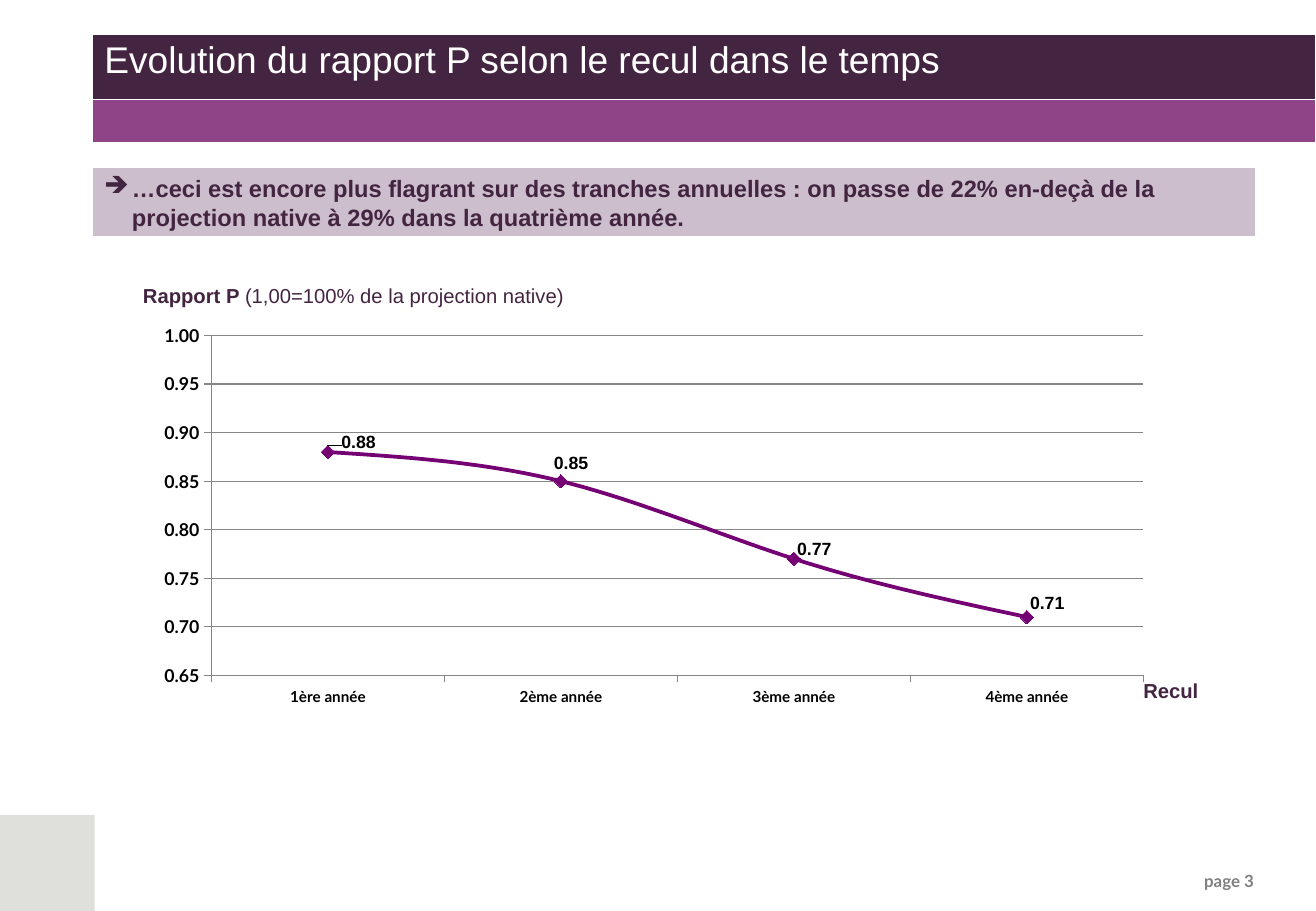
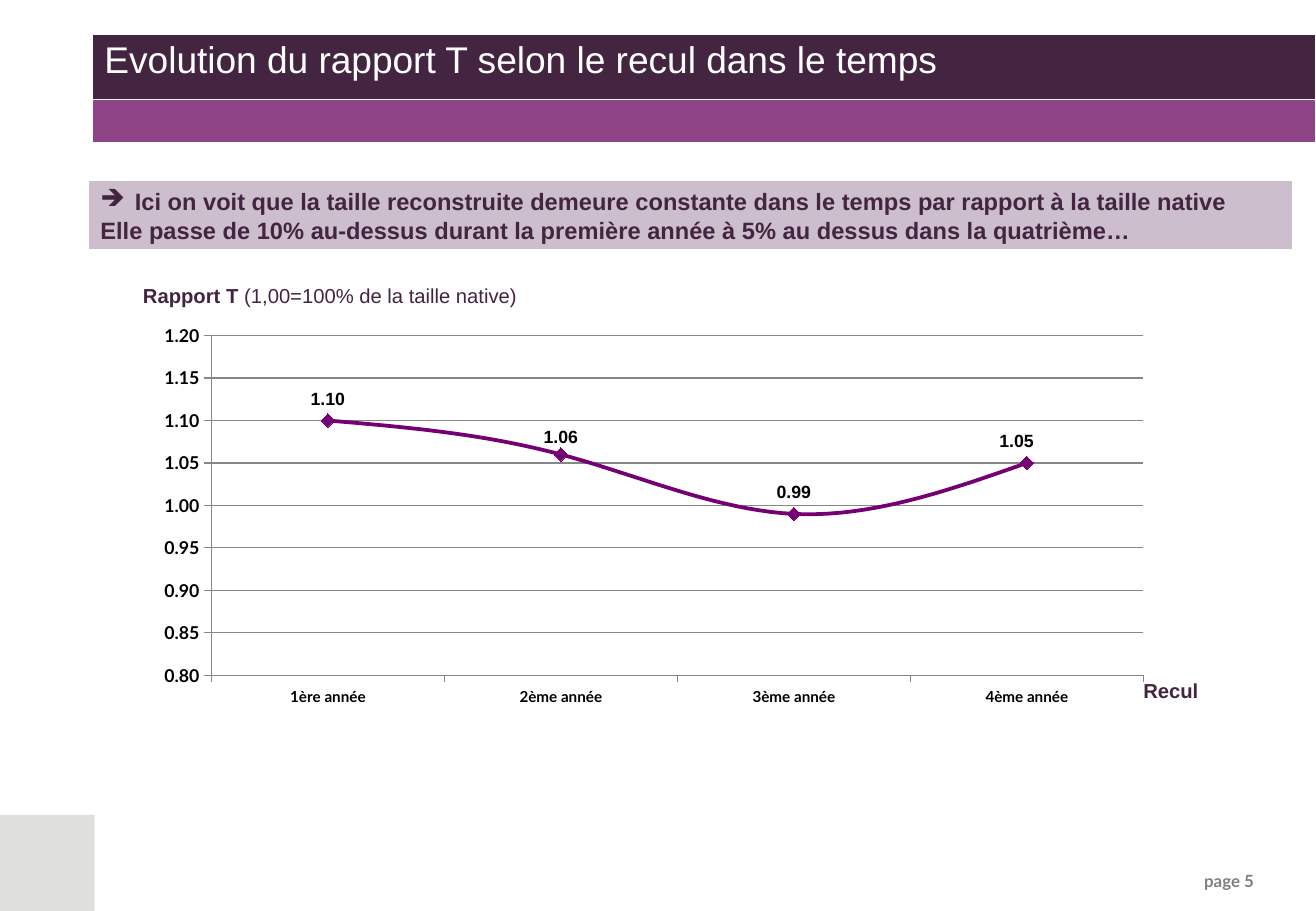
import pptx
import pptx.chart.data
import pptx.dml.color
import pptx.enum.chart
import pptx.enum.shapes
import pptx.enum.text
import pptx.oxml
import pptx.oxml.ns
import pptx.util
from lxml import etree

Cm, Pt = pptx.util.Cm, pptx.util.Pt
qn = pptx.oxml.ns.qn


class Theme:
    dark, purple, pale = "432541", "8E4487", "CCBECC"
    corner, footer, curve = "DFE0DB", "808080", "740074"
    white, black, grid = "FFFFFF", "000000", "868686"
    body, figures = "Arial", "Lato"
    title, callout, caption, page = 22, 14, 12, 10
    values, categories = 10.5, 9
    hairline, curve_width, marker = 0.75, 2.25, 8


# Content; each callout line is (text, hanging indent in cm or 0 for no arrow)
YEARS = ["1ère année", "2ème année", "3ème année", "4ème année"]
SLIDES = [
    dict(
        page=3, ratio="P", unit="projection native",
        callout=[("…ceci est encore plus flagrant sur des tranches annuelles : "
                  "on passe de 22% en-deçà de la projection native à 29% "
                  "dans la quatrième année.", 0.58)],
        callout_box=(1.93, 3.51, 24.33, 1.45),
        values=[0.88, 0.85, 0.77, 0.71], scale=(0.65, 1),
        # label shifts from "above", as shares of the chart's width and height
        shifts=[(0.03, 0.03), (0.01, 0.01), (0.02, 0.03), (0.02, 0.02)],
    ),
    dict(
        page=5, ratio="T", unit="taille native",
        callout=[("Ici on voit que la taille reconstruite demeure constante "
                  "dans le temps par rapport à la taille native", 0.72),
                 ("Elle passe de 10% au-dessus durant la première année "
                  "à 5% au dessus dans la quatrième…", 0)],
        callout_box=(1.85, 3.78, 25.17, 1.45),
        values=[1.1, 1.06, 0.99, 1.05], scale=(0.8, 1.2),
        shifts=[(0, 0), (0, 0.01), (0, 0), (-0.01, 0)],
    ),
]

# Layout, in cm
SLIDE_SIZE = (27.51, 19.05)
CORNER_BOX = (0, 17.04, 1.98, 2.01)
FOOTER_BOX = (2.06, 18.08, 25.45, 0.69)
FOOTER_RIGHT = 1.3
TITLE_BOX = (1.93, 0.71, 25.58, 2.28)
TITLE_ROWS = [1.37, 0.91]
CAPTION_BOX = (2.74, 5.79, 9.8, 0.76)
CHART_BOX = (2.92, 6.6, 21.41, 8.36)
RECUL_BOX = (23.65, 14.05, 1.68, 0.76)
PLOT_AREA = dict(x=0.07, y=0.05, w=0.91, h=0.85)


def rgb(color):
    return pptx.dml.color.RGBColor.from_string(color)


def cm(box):
    return [Cm(length) for length in box]


def style(font, size, color, bold=False, name=Theme.body):
    font.size, font.bold, font.name = Pt(size), bold, name
    font.color.rgb = rgb(color)


def paint(shape, color):
    shape.fill.solid()
    shape.fill.fore_color.rgb = rgb(color)


def stroke(line, color, width=Theme.hairline):
    line.color.rgb = rgb(color)
    line.width = Pt(width)


def add_rect(s, box, color):
    sp = s.shapes.add_shape(pptx.enum.shapes.MSO_SHAPE.RECTANGLE, *cm(box))
    sp.shadow.inherit = False
    paint(sp, color)
    sp.line.fill.background()
    return sp


def add_text(s, box, runs, size, color, name=Theme.body, wrap=False):
    """runs: (text, bold) pairs on one line."""
    tf = s.shapes.add_textbox(*cm(box)).text_frame
    tf.word_wrap = wrap
    for text, bold in runs:
        r = tf.paragraphs[0].add_run()
        r.text = text
        style(r.font, size, color, bold, name)
    return tf


def add_frame(s, page, title):
    """Corner block, page number and two-row title band."""
    add_rect(s, CORNER_BOX, Theme.corner)
    tf = add_text(s, FOOTER_BOX, [(f"page {page}", True)], Theme.page,
                  Theme.footer, Theme.figures, wrap=True)
    tf.margin_right = Cm(FOOTER_RIGHT)
    tf.paragraphs[0].alignment = pptx.enum.text.PP_ALIGN.RIGHT

    table = s.shapes.add_table(len(TITLE_ROWS), 1, *cm(TITLE_BOX)).table
    table.first_row = table.horz_banding = False
    for i, color in enumerate([Theme.dark, Theme.purple]):
        table.rows[i].height = Cm(TITLE_ROWS[i])
        paint(table.cell(i, 0), color)
    table.cell(1, 0).margin_top = table.cell(1, 0).margin_bottom = 0
    p = table.cell(0, 0).text_frame.paragraphs[0]
    p.text = title
    style(p.runs[0].font, Theme.title, Theme.white)


def add_callout(s, box, lines):
    sp = add_rect(s, box, Theme.pale)
    stroke(sp.line, Theme.white)
    tf = sp.text_frame
    tf.word_wrap = True
    for i, (text, indent) in enumerate(lines):
        p = tf.add_paragraph() if i else tf.paragraphs[0]
        p.text = text
        p.alignment = pptx.enum.text.PP_ALIGN.LEFT
        if indent:
            pPr = p._p.get_or_add_pPr()
            pPr.set("marL", str(Cm(indent)))
            pPr.set("indent", str(-Cm(indent)))
            etree.SubElement(pPr, qn("a:buChar")).set("char", "➔")
        style(p.runs[0].font, Theme.callout, Theme.dark, bold=True)


def manual_layout(parts):
    """c:layout element from (tag, value) pairs."""
    layout = etree.Element(qn("c:layout"))
    manual = etree.SubElement(layout, qn("c:manualLayout"))
    for tag, value in parts:
        etree.SubElement(manual, qn(f"c:{tag}")).set("val", str(value))
    return layout


def add_ratio_chart(s, values, scale, shifts):
    xl = pptx.enum.chart
    data = pptx.chart.data.CategoryChartData(number_format="#,##0.00")
    data.categories = YEARS
    data.add_series("Series 1", values)
    chart = s.shapes.add_chart(xl.XL_CHART_TYPE.LINE_MARKERS,
                               *cm(CHART_BOX), data).chart
    chart.has_title = chart.has_legend = False
    style(chart.font, 18, Theme.black)

    # Axes
    value_axis, category_axis = chart.value_axis, chart.category_axis
    value_axis.minimum_scale, value_axis.maximum_scale = scale
    value_axis.major_unit = 0.05
    value_axis.tick_labels.number_format = "#,##0.00"
    value_axis.tick_labels.number_format_is_linked = False
    stroke(value_axis.major_gridlines.format.line, Theme.grid)
    for axis, size in [(value_axis, Theme.values),
                       (category_axis, Theme.categories)]:
        axis.major_tick_mark = xl.XL_TICK_MARK.OUTSIDE
        stroke(axis.format.line, Theme.grid)
        style(axis.tick_labels.font, size, Theme.black, True, Theme.figures)

    # Curve
    chart.plots[0].vary_by_categories = False
    series = chart.plots[0].series[0]
    series.smooth = True
    stroke(series.format.line, Theme.curve, Theme.curve_width)
    series.marker.style = xl.XL_MARKER_STYLE.DIAMOND
    series.marker.size = Theme.marker
    paint(series.marker.format, Theme.curve)
    stroke(series.marker.format.line, Theme.curve)

    # Value labels
    labels = series.data_labels
    labels.show_value = True
    labels.number_format = "#,##0.00"
    labels.number_format_is_linked = False
    style(labels.font, Theme.values, Theme.black, True)
    for i in range(len(values)):
        label = series.points[i].data_label
        style(label.font, Theme.values, Theme.black, True)
        label.position = xl.XL_LABEL_POSITION.ABOVE
    for idx, shift in zip(chart.element.xpath(".//c:dLbl/c:idx"), shifts):
        idx.addnext(manual_layout(zip("xy", shift)))

    # Fixed inner plot area
    plot_area = chart.element.xpath(".//c:plotArea")[0]
    for old in plot_area.findall(qn("c:layout")):
        plot_area.remove(old)
    modes = [("layoutTarget", "inner"), ("xMode", "edge"), ("yMode", "edge")]
    plot_area.insert(0, manual_layout(modes + list(PLOT_AREA.items())))


def main():
    prs = pptx.Presentation()
    prs.slide_width, prs.slide_height = cm(SLIDE_SIZE)
    for content in SLIDES:
        s = prs.slides.add_slide(prs.slide_layouts[6])
        ratio = content["ratio"]
        add_frame(s, content["page"],
                  f"Evolution du rapport {ratio} selon le recul dans le temps")
        add_callout(s, content["callout_box"], content["callout"])
        add_ratio_chart(s, content["values"], content["scale"],
                        content["shifts"])
        caption = [(f"Rapport {ratio} ", True),
                   (f"(1,00=100% de la {content['unit']})", False)]
        add_text(s, CAPTION_BOX, caption, Theme.caption, Theme.dark)
        add_text(s, RECUL_BOX, [("Recul", True)], Theme.caption, Theme.dark)
    prs.save("out.pptx")


if __name__ == "__main__":
    main()
